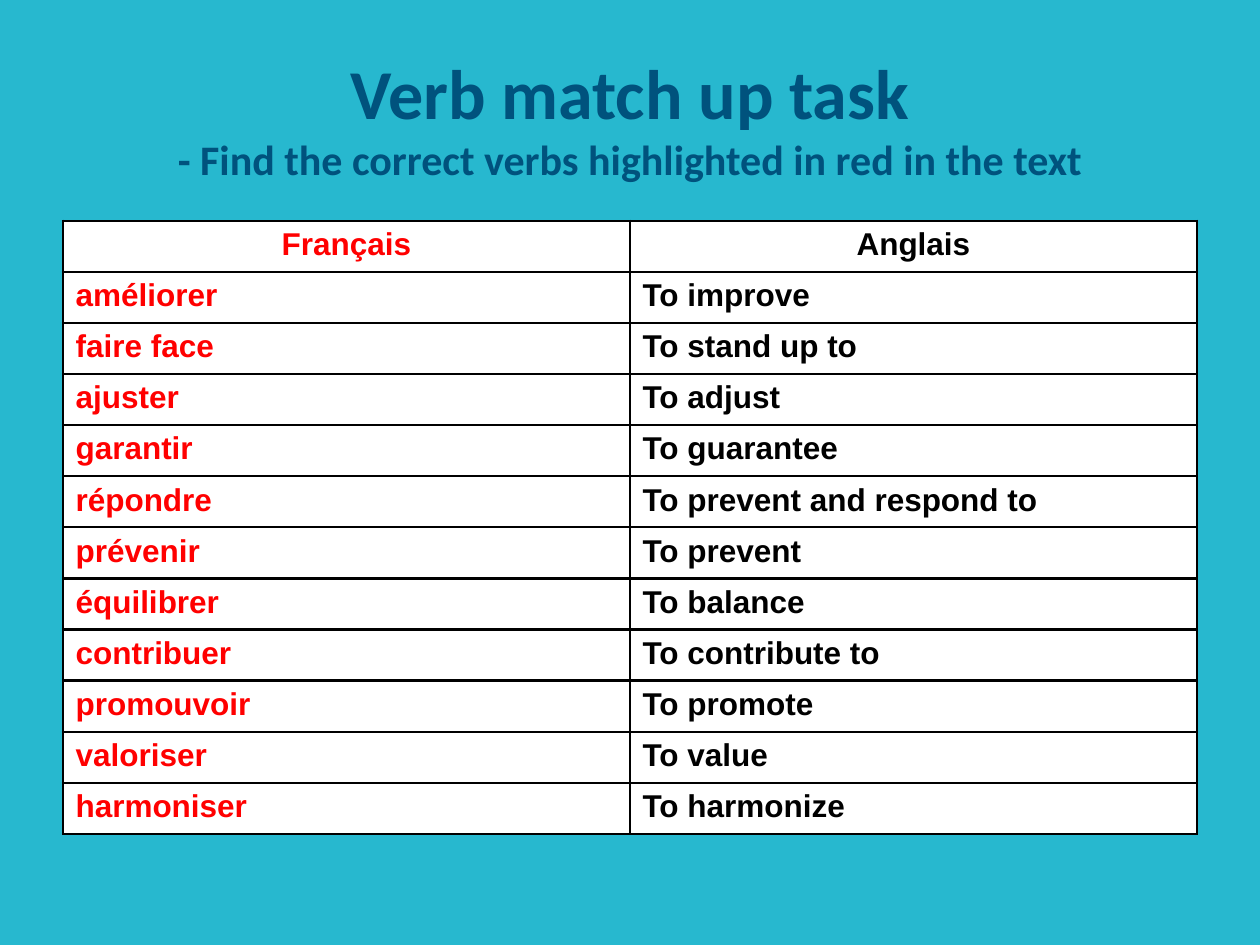
"""Build a French-English verb match-up slide."""
from lxml.etree import SubElement
from pptx import Presentation
from pptx.dml.color import RGBColor
from pptx.enum.text import MSO_ANCHOR, PP_ALIGN
from pptx.oxml.ns import qn
from pptx.util import Cm, Pt

VERBS = [
    ("améliorer", "To improve"),
    ("faire face", "To stand up to"),
    ("ajuster", "To adjust"),
    ("garantir", "To guarantee"),
    ("répondre", "To prevent and respond to"),
    ("prévenir", "To prevent"),
    ("équilibrer", "To balance"),
    ("contribuer", "To contribute to"),
    ("promouvoir", "To promote"),
    ("valoriser", "To value"),
    ("harmoniser", "To harmonize"),
]


def color(value):
    return RGBColor.from_string(value)


class VerbSlide:
    background = "27B8CF"
    title_color = "00527D"
    column_colors = ("FF0000", "000000")
    cell_fill = "FFFFFF"
    border_color = "000000"
    border_width = Pt(1.5)
    left, width = Cm(1.27), Cm(22.86)
    row_height = Cm(1.03)

    def __init__(self, deck):
        self.slide = deck.slides.add_slide(deck.slide_layouts[5])
        fill = self.slide.background.fill
        fill.solid()
        fill.fore_color.rgb = color(self.background)

    def format_span(self, span, font_name, size, text_color):
        span.font.name = font_name
        span.font.size = Pt(size)
        span.font.bold = True
        span.font.color.rgb = color(text_color)

    def add_title(self, heading, instruction):
        box = self.slide.shapes.title
        box.left, box.top, box.width, box.height = self.left, Cm(0.76), self.width, Cm(3.18)
        frame = box.text_frame
        frame.vertical_anchor = MSO_ANCHOR.MIDDLE
        para = frame.paragraphs[0]
        para.text = f"{heading}\v{instruction}"
        para.alignment = PP_ALIGN.CENTER
        for span, size in zip(para.runs, (40, 24)):
            self.format_span(span, "Calibri", size, self.title_color)
        line_break = para._p.find(qn("a:br"))
        SubElement(line_break, qn("a:rPr"), sz="4000")

    def add_borders(self, cell):
        properties = cell._tc.get_or_add_tcPr()
        for side in ("L", "R", "T", "B"):
            line = SubElement(properties, qn(f"a:ln{side}"), w=str(self.border_width))
            fill = SubElement(line, qn("a:solidFill"))
            SubElement(fill, qn("a:srgbClr"), val=self.border_color)

    def fill_cell(self, cell, text, text_color, alignment):
        self.add_borders(cell)
        cell.fill.solid()
        cell.fill.fore_color.rgb = color(self.cell_fill)
        para = cell.text_frame.paragraphs[0]
        para.text = text
        para.alignment = alignment
        self.format_span(para.runs[0], "Arial", 18, text_color)

    def add_verb_table(self, headers, verbs):
        rows = [headers, *verbs]
        height = self.row_height * len(rows)
        table = self.slide.shapes.add_table(
            len(rows), len(headers), self.left, Cm(4.45), self.width, height
        ).table
        for row_index, texts in enumerate(rows):
            alignment = PP_ALIGN.LEFT if row_index else PP_ALIGN.CENTER
            for column_index, text in enumerate(texts):
                cell = table.cell(row_index, column_index)
                self.fill_cell(cell, text, self.column_colors[column_index], alignment)


def main():
    deck = Presentation()
    deck.slide_width, deck.slide_height = Cm(25.4), Cm(19.05)
    page = VerbSlide(deck)
    page.add_title(
        "Verb match up task",
        "- Find the correct verbs highlighted in red in the text",
    )
    page.add_verb_table(("Français", "Anglais"), VERBS)
    deck.save("out.pptx")


if __name__ == "__main__":
    main()
